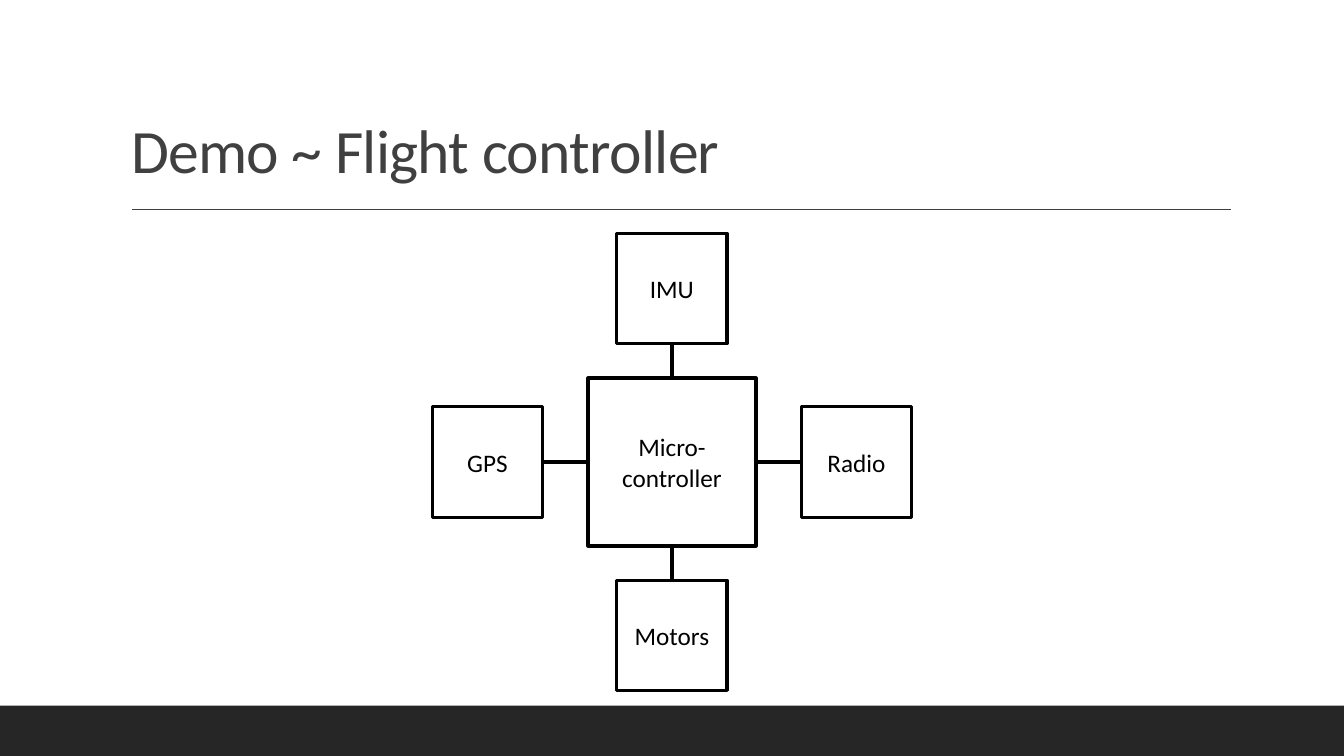
from dataclasses import dataclass

import pptx
import pptx.dml.color
import pptx.enum.shapes
import pptx.enum.text
import pptx.oxml.ns
import pptx.shapes.autoshape
import pptx.shapes.connector
import pptx.slide
import pptx.text.text
import pptx.util
import lxml.etree

Pt = pptx.util.Pt
FONT = "Calibri"
HUB_X, HUB_Y = 480, 330
HUB_SIZE = 120
MODULE_SIZE = 78.8
REACH_X, REACH_Y = 131.8, 123.8


@dataclass(frozen=True)
class Module:
    label: str
    step_x: int
    step_y: int
    hub_side: int


MODULES = [
    Module("Radio", 1, 0, 3),
    Module("GPS", -1, 0, 1),
    Module("IMU", 0, -1, 0),
    Module("Motors", 0, 1, 2),
]


def colour(value: str) -> pptx.dml.color.RGBColor:
    return pptx.dml.color.RGBColor.from_string(value)


def add_span(para: pptx.text.text._Paragraph, text: str, size: float, ink: str) -> pptx.text.text._Run:
    span = para.add_run()
    span.text = text
    span.font.name = FONT
    span.font.size = Pt(size)
    span.font.color.rgb = colour(ink)
    return span


def add_box(page: pptx.slide.Slide, left: float, top: float, width: float, height: float,
            fill: str) -> pptx.shapes.autoshape.Shape:
    box = page.shapes.add_shape(pptx.enum.shapes.MSO_SHAPE.RECTANGLE,
                                Pt(left), Pt(top), Pt(width), Pt(height))
    box.shadow.inherit = False
    box.fill.solid()
    box.fill.fore_color.rgb = colour(fill)
    box.line.fill.background()
    return box


def add_block(page: pptx.slide.Slide, label: str, centre_x: float, centre_y: float,
              size: float) -> pptx.shapes.autoshape.Shape:
    box = add_box(page, centre_x - size / 2, centre_y - size / 2, size, size, "FFFFFF")
    box.line.color.rgb = colour("000000")
    box.line.width = Pt(2.25)
    box.text_frame.word_wrap = True
    box.text_frame.vertical_anchor = pptx.enum.text.MSO_ANCHOR.MIDDLE
    para = box.text_frame.paragraphs[0]
    para.alignment = pptx.enum.text.PP_ALIGN.CENTER
    add_span(para, label, 18, "000000")
    return box


def add_line(page: pptx.slide.Slide, start_x: float, start_y: float, end_x: float, end_y: float,
             ink: str, width: float) -> pptx.shapes.connector.Connector:
    line = page.shapes.add_connector(pptx.enum.shapes.MSO_CONNECTOR.STRAIGHT,
                                     Pt(start_x), Pt(start_y), Pt(end_x), Pt(end_y))
    line.line.color.rgb = colour(ink)
    line.line.width = Pt(width)
    lxml.etree.SubElement(line._element.spPr, pptx.oxml.ns.qn("a:effectLst"))
    return line


def set_title(page: pptx.slide.Slide, text: str) -> None:
    title = page.shapes.title
    title.left, title.top, title.width, title.height = Pt(86.4), Pt(22.5), Pt(792), Pt(114.25)
    frame = title.text_frame
    frame.word_wrap = True
    frame.auto_size = pptx.enum.text.MSO_AUTO_SIZE.NONE
    frame.vertical_anchor = pptx.enum.text.MSO_ANCHOR.BOTTOM
    para = frame.paragraphs[0]
    para.alignment = pptx.enum.text.PP_ALIGN.LEFT
    para.line_spacing = 0.9
    span = add_span(para, text, 44, "404040")
    span.font._element.set("spc", "-50")


def main() -> None:
    deck = pptx.Presentation()
    deck.slide_width, deck.slide_height = Pt(960), Pt(540)
    page = deck.slides.add_slide(deck.slide_layouts[5])

    add_box(page, 0, 504, 960, 36, "262626")
    add_line(page, 94.3, 149.5, 879, 149.5, "404040", 1)
    set_title(page, "Demo ~ Flight controller")

    hub = add_block(page, "Micro-controller", HUB_X, HUB_Y, HUB_SIZE)
    for module in MODULES:
        box = add_block(page, module.label, HUB_X + module.step_x * REACH_X,
                        HUB_Y + module.step_y * REACH_Y, MODULE_SIZE)
        link = add_line(page, HUB_X, HUB_Y, HUB_X, HUB_Y, "000000", 3)
        link.begin_connect(box, (module.hub_side + 2) % 4)
        link.end_connect(hub, module.hub_side)

    deck.save("out.pptx")


if __name__ == "__main__":
    main()
